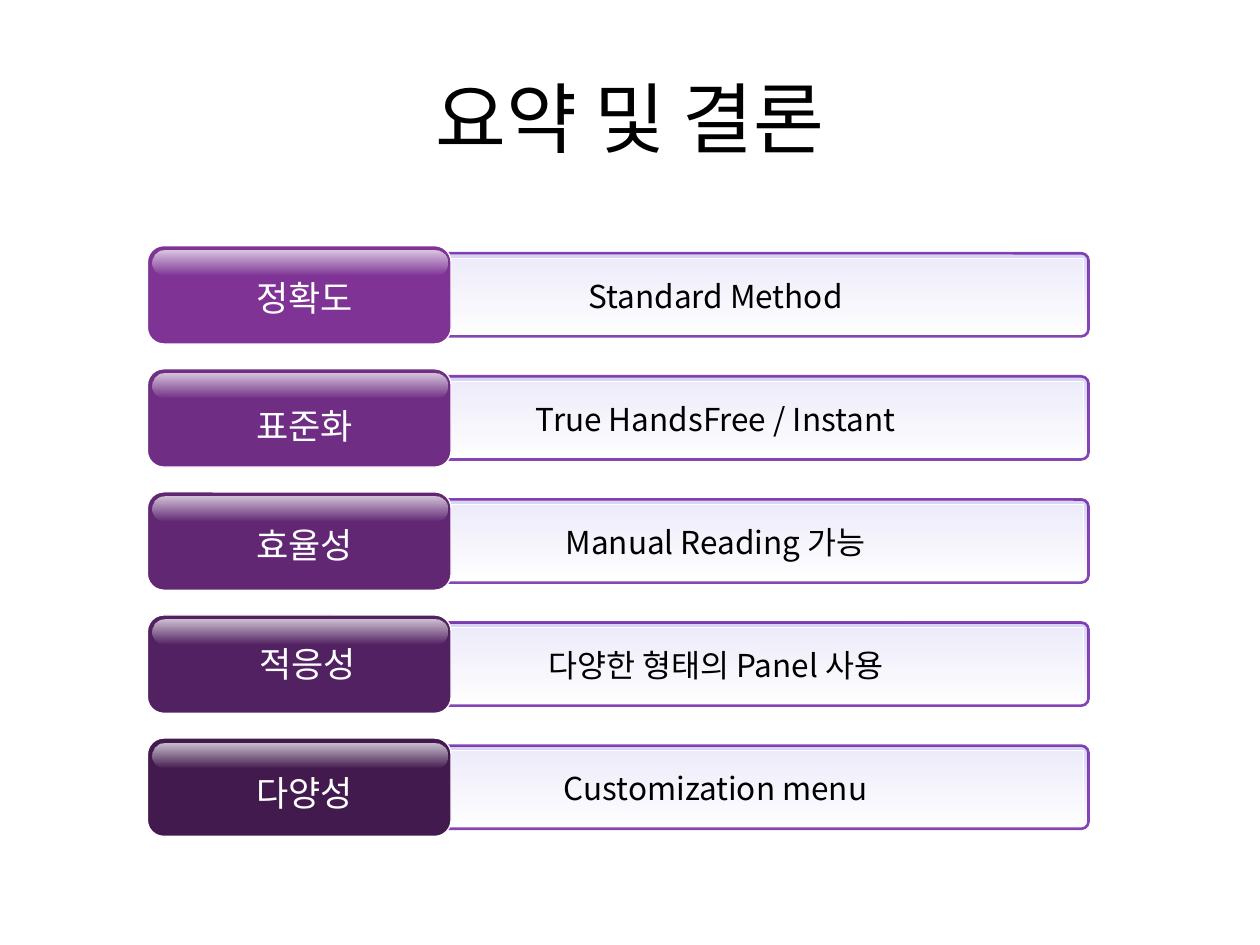
from lxml import etree
from pptx import Presentation
from pptx.dml.color import RGBColor
from pptx.enum.shapes import MSO_SHAPE
from pptx.enum.text import MSO_ANCHOR, MSO_AUTO_SIZE, PP_ALIGN
from pptx.oxml.ns import qn
from pptx.util import Inches, Pt

ROUNDED, RECTANGLE = MSO_SHAPE.ROUNDED_RECTANGLE, MSO_SHAPE.RECTANGLE
TOP, MIDDLE = MSO_ANCHOR.TOP, MSO_ANCHOR.MIDDLE
GROW, FIXED = MSO_AUTO_SIZE.SHAPE_TO_FIT_TEXT, MSO_AUTO_SIZE.NONE
CENTER = PP_ALIGN.CENTER

COLORS = {"black": "000000", "white": "FFFFFF", "lavender": "D8D3F5", "violet": "580199"}
FONT = "Noto Sans CJK KR"

FIRST_TOP, ROW_PITCH = 1.95, 0.977
PANEL_TEXT_CENTER = 5.68
# label, label colour, label text left and top, description, description width
ROWS = [
    ("정확도", "7E3395", 1.9, 2.1, "Standard Method", 2.48),
    ("표준화", "6F2D83", 1.9, 3.12, "True HandsFree / Instant", 3.52),
    ("효율성", "612773", 1.9, 4.06, "Manual Reading 가능", 2.93),
    ("적응성", "522161", 1.92, 5.01, "다양한 형태의 Panel 사용", 3.2),
    ("다양성", "421A4E", 1.9, 6.03, "Customization menu", 2.97),
]


class SlideBuilder:
    def __init__(self, slide, font):
        self.slide = slide
        self.font = font

    def set_alpha(self, color_element, percent):
        alpha = etree.SubElement(color_element, qn("a:alpha"))
        alpha.set("val", str(percent * 1000))

    def box(self, kind, left, top, width, height, radius=None):
        shape = self.slide.shapes.add_shape(
            kind, Inches(left), Inches(top), Inches(width), Inches(height))
        shape.shadow.inherit = False
        shape.line.fill.background()
        if radius is not None:
            shape.adjustments[0] = radius
        return shape

    def solid(self, shape, color, alpha=100):
        shape.fill.solid()
        shape.fill.fore_color.rgb = RGBColor.from_string(color)
        if alpha < 100:
            self.set_alpha(shape.fill._xPr.find(".//" + qn("a:srgbClr")), alpha)

    def gradient(self, shape, colors, alphas=(100, 100)):
        shape.fill.gradient()
        shape.fill.gradient_angle = 270  # downwards
        for stop, position, color, alpha in zip(
                shape.fill.gradient_stops, (0, 1), colors, alphas):
            stop.position = position
            stop.color.rgb = RGBColor.from_string(color)
            if alpha < 100:
                self.set_alpha(stop._gs.find(qn("a:srgbClr")), alpha)

    def outline(self, shape, color, width, alpha=100):
        shape.line.color.rgb = RGBColor.from_string(color)
        shape.line.width = Pt(width)
        if alpha < 100:
            self.set_alpha(shape.line._ln.find(".//" + qn("a:srgbClr")), alpha)

    def text(self, words, left, top, width, height, size, color, anchor=MIDDLE,
             wrap=False, spacing=1.0, before=0):
        shape = self.slide.shapes.add_textbox(
            Inches(left), Inches(top), Inches(width), Inches(height))
        frame = shape.text_frame
        frame.text = words
        frame.word_wrap = wrap
        frame.auto_size = FIXED if wrap else GROW
        frame.vertical_anchor = anchor
        paragraph = frame.paragraphs[0]
        paragraph.alignment = CENTER
        paragraph.line_spacing = spacing
        paragraph.space_before = Pt(before)
        for run in paragraph.runs:
            run.font.size = Pt(size)
            run.font.color.rgb = RGBColor.from_string(color)
            run.font.name = self.font
            east_asian = etree.SubElement(run.font._element, qn("a:ea"))
            east_asian.set("typeface", self.font)

    def panel(self, top, words, text_width):
        white = COLORS["white"]
        frame = self.box(ROUNDED, 2.71, top + 0.06, 5.93, 0.66, 0.087)
        self.gradient(frame, (COLORS["lavender"], white))
        self.outline(frame, COLORS["violet"], 1.5, 72)
        veil = self.box(RECTANGLE, 2.74, top + 0.1, 5.86, 0.59)
        self.solid(veil, white, 53)
        self.outline(veil, white, 0.75)
        self.text(words, PANEL_TEXT_CENTER - text_width / 2, top + 0.08, text_width, 0.52,
                  18, COLORS["black"], TOP, spacing=1.4, before=3.6)

    def label(self, top, words, color, text_left, text_top):
        white = COLORS["white"]
        button = self.box(ROUNDED, 1.17, top, 2.41, 0.78, 0.167)
        self.solid(button, color)
        self.outline(button, white, 0.75)
        gloss = self.box(ROUNDED, 1.21, top + 0.04, 2.34, 0.19, 0.5)
        self.gradient(gloss, (white, white), (74, 0))
        self.text(words, text_left, text_top, 1.04, 0.45, 20, white, spacing=1.2)


def main():
    presentation = Presentation()
    presentation.slide_width, presentation.slide_height = Inches(10), Inches(7.5)
    slide = presentation.slides.add_slide(presentation.slide_layouts[6])
    builder = SlideBuilder(slide, FONT)

    # Title
    builder.text("요약 및 결론", 0.5, 0.3, 9, 1.25, 44, COLORS["black"], wrap=True)

    # One description panel and one glossy label per row
    for index, (name, color, left, text_top, description, width) in enumerate(ROWS):
        top = FIRST_TOP + index * ROW_PITCH
        builder.panel(top, description, width)
        builder.label(top, name, color, left, text_top)

    presentation.save("out.pptx")


if __name__ == "__main__":
    main()
